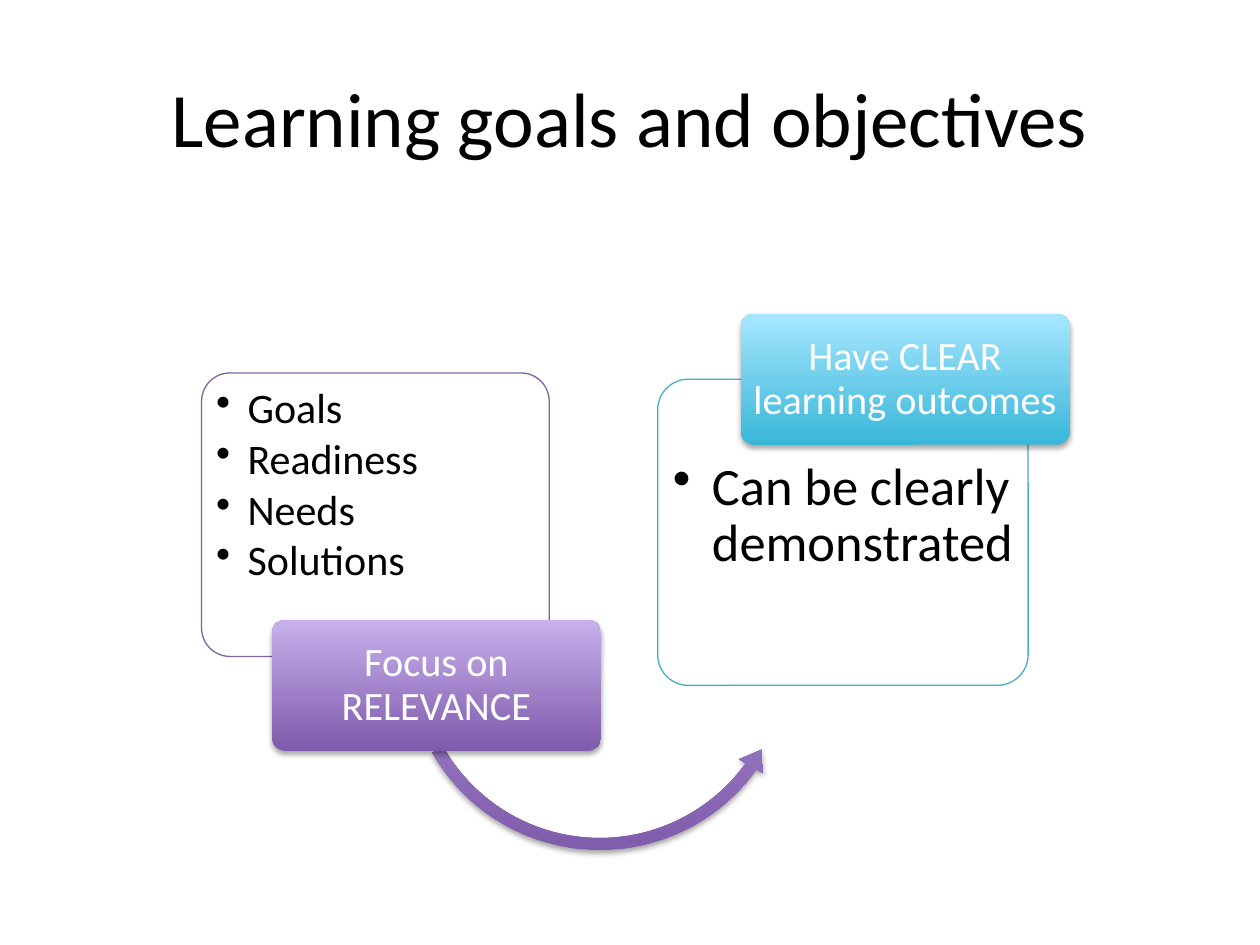
from dataclasses import dataclass

from lxml import etree
from pptx import Presentation
from pptx.dml.color import RGBColor
from pptx.enum.shapes import MSO_SHAPE
from pptx.enum.text import MSO_ANCHOR, PP_ALIGN
from pptx.oxml.ns import qn
from pptx.util import Inches, Pt

ROUNDED = MSO_SHAPE.ROUNDED_RECTANGLE
CURVED_ARROW = MSO_SHAPE.LEFT_CIRCULAR_ARROW
TOP, MIDDLE = MSO_ANCHOR.TOP, MSO_ANCHOR.MIDDLE
LEFT, CENTER = PP_ALIGN.LEFT, PP_ALIGN.CENTER
COLUMNS, ROWS = 100, 75


@dataclass(frozen=True)
class Theme:
    """Colours, type sizes and spacing of the slide."""
    font: str = "Calibri"
    ink: str = "000000"
    paper: str = "FFFFFF"
    purple: tuple = ("8064A2", "7F5BAB", "C8B0ED")
    aqua: tuple = ("4BACC6", "39B7D8", "A7E6FF")
    title_size: int = 44
    caption_size: int = 23
    goals_size: int = 24
    outcome_size: int = 30
    leading: float = 0.9
    gap_share: float = 0.13


THEME = Theme()


def place(prs, box):
    """Turn a box in grid columns and rows into slide lengths."""
    column, row = prs.slide_width / COLUMNS, prs.slide_height / ROWS
    left, top, width, height = box
    return [round(n) for n in (left * column, top * row, width * column, height * row)]


def write(frame, lines, size, color, align, anchor, insets):
    """Fill a text frame with evenly styled paragraphs."""
    frame.word_wrap = True
    frame.vertical_anchor = anchor
    (frame.margin_left, frame.margin_top,
     frame.margin_right, frame.margin_bottom) = map(Inches, insets)
    frame.text = "\n".join(lines)
    for paragraph in frame.paragraphs:
        paragraph.alignment = align
        paragraph.line_spacing = THEME.leading
        for run in paragraph.runs:
            run.font.name = THEME.font
            run.font.size = Pt(size)
            run.font.color.rgb = RGBColor.from_string(color)


def add_bullets(frame, size, indent):
    """Give each paragraph a hanging bullet and a gap below."""
    for paragraph in frame.paragraphs:
        paragraph.space_after = Pt(round(size * THEME.gap_share, 1))
        properties = paragraph._p.get_or_add_pPr()
        properties.set("marL", str(Inches(indent)))
        properties.set("indent", str(-Inches(indent)))
        etree.SubElement(properties, qn("a:buChar"), char="•")


def shade(shape, palette):
    """Apply a vertical gradient and a soft shadow below."""
    shape.fill.gradient()
    shape.fill.gradient_angle = 90
    for stop, color in zip(shape.fill.gradient_stops, palette[1:]):
        stop.color.rgb = RGBColor.from_string(color)
    shape.line.fill.background()
    shape.shadow.inherit = False
    effects = shape._element.spPr.find(qn("a:effectLst"))
    shadow = etree.SubElement(effects, qn("a:outerShdw"), blurRad="40000",
                              dist="23000", dir="5400000", rotWithShape="0")
    tone = etree.SubElement(shadow, qn("a:srgbClr"), val=THEME.ink)
    etree.SubElement(tone, qn("a:alpha"), val="35000")


def add_title(prs, slide, box, text):
    """Place the centred slide title."""
    title = slide.shapes.add_textbox(*place(prs, box))
    write(title.text_frame, [text], THEME.title_size, THEME.ink,
          CENTER, MIDDLE, (0.1, 0.05, 0.1, 0.05))
    title.text_frame.paragraphs[0].line_spacing = 1.0


def add_panel(prs, slide, box, points, size, indent, top_inset, palette):
    """Place an outlined panel with a bulleted list."""
    panel = slide.shapes.add_shape(ROUNDED, *place(prs, box))
    panel.adjustments[0] = 0.1
    panel.shadow.inherit = False
    panel.fill.solid()
    panel.fill.fore_color.rgb = RGBColor.from_string(THEME.paper)
    tone = panel._element.spPr.find(qn("a:solidFill")).find(qn("a:srgbClr"))
    etree.SubElement(tone, qn("a:alpha"), val="90000")
    panel.line.color.rgb = RGBColor.from_string(palette[0])
    panel.line.width = Pt(0.75)
    write(panel.text_frame, points, size, THEME.ink, LEFT, TOP,
          (0.05, top_inset, 0, 0))
    add_bullets(panel.text_frame, size, indent)


def add_caption(prs, slide, box, text, palette):
    """Place a shaded caption that overlaps its panel."""
    caption = slide.shapes.add_shape(ROUNDED, *place(prs, box))
    caption.adjustments[0] = 0.1
    shade(caption, palette)
    write(caption.text_frame, [text], THEME.caption_size, THEME.paper,
          CENTER, MIDDLE, (0.05, 0.03, 0.05, 0.03))


def add_curved_arrow(prs, slide, box, palette):
    """Place the arrow that leads from the first panel to the second."""
    arrow = slide.shapes.add_shape(CURVED_ARROW, *place(prs, box))
    for index, value in enumerate((0.03, 3.64, 21.39, 90.25, 0.035)):
        arrow.adjustments[index] = value
    shade(arrow, palette)


def main():
    """Build and save the slide."""
    prs = Presentation()
    prs.slide_width, prs.slide_height = Inches(10), Inches(7.5)
    slide = prs.slides.add_slide(prs.slide_layouts[6])
    add_title(prs, slide, (5, 3, 90, 12.5), "Learning goals and objectives")
    add_panel(prs, slide, (16, 29.6, 27.6, 22.5),
              ["Goals", "Readiness", "Needs", "Solutions"],
              THEME.goals_size, 0.25, 0.05, THEME.purple)
    add_curved_arrow(prs, slide, (31.7, 36.3, 31.8, 31.8), THEME.purple)
    add_caption(prs, slide, (21.6, 49.2, 26.1, 10.4),
                "Focus on RELEVANCE", THEME.purple)
    add_panel(prs, slide, (52.2, 30.1, 29.4, 24.3),
              ["Can be clearly demonstrated"],
              THEME.outcome_size, 0.31, 0.57, THEME.aqua)
    add_caption(prs, slide, (58.8, 24.9, 26.1, 10.4),
                "Have CLEAR learning outcomes", THEME.aqua)
    prs.save("out.pptx")


if __name__ == "__main__":
    main()
